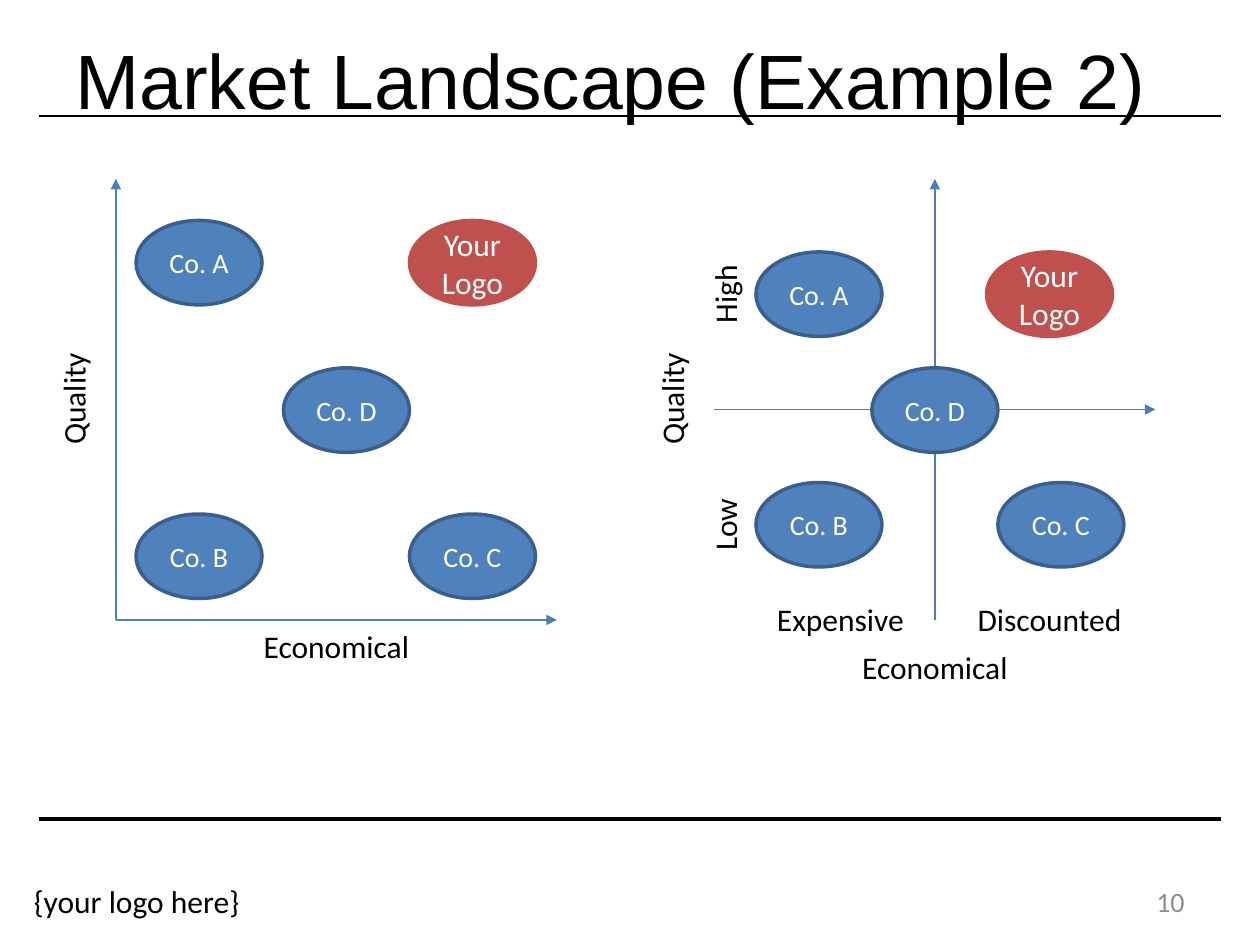
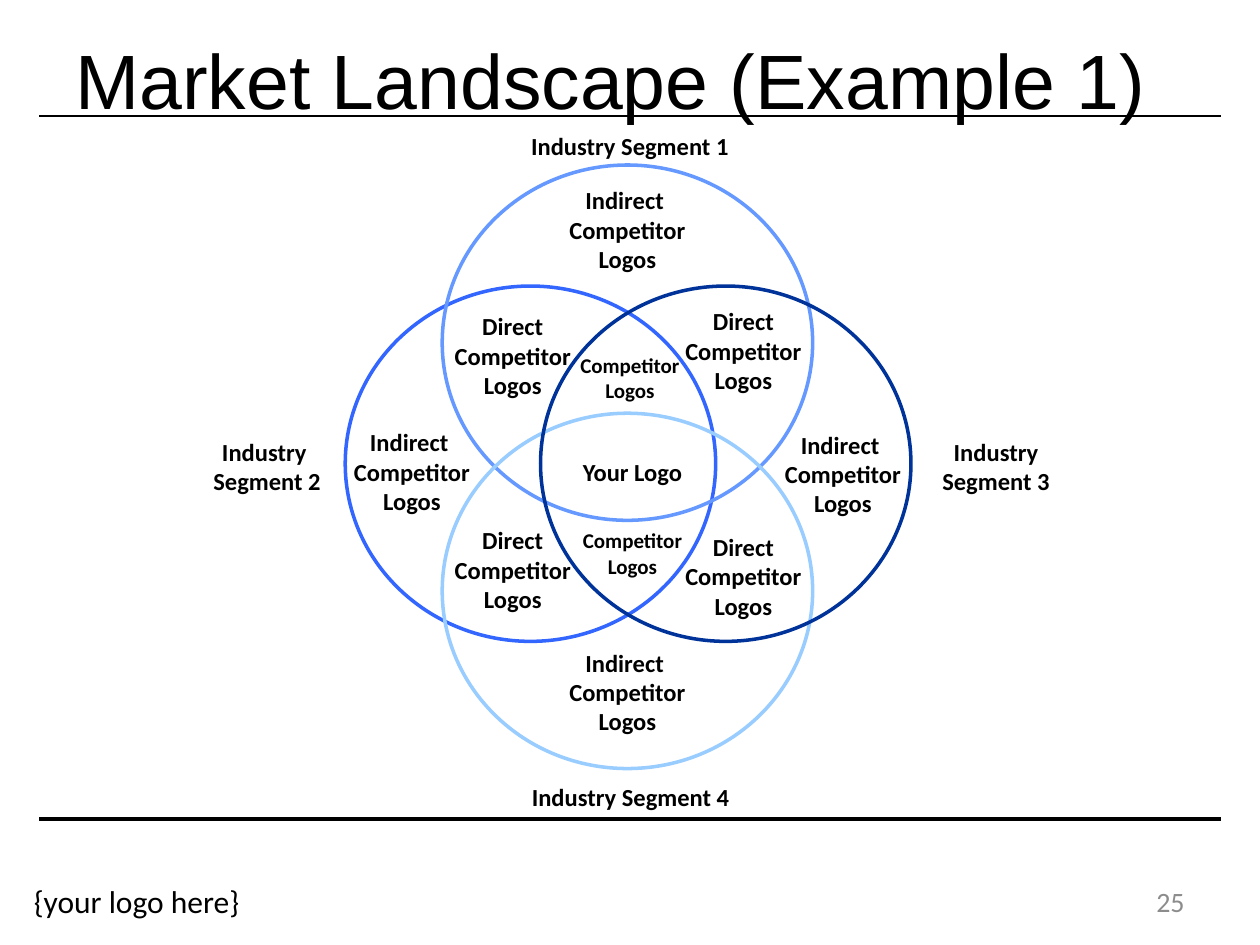
import pptx
import pptx.dml.color
import pptx.enum.shapes
import pptx.enum.text
import pptx.oxml.ns
import pptx.util
from lxml import etree

Inches = pptx.util.Inches
Pt = pptx.util.Pt
color = pptx.dml.color.RGBColor.from_string
OVAL = pptx.enum.shapes.MSO_SHAPE.OVAL
ALIGN = pptx.enum.text.PP_ALIGN

BLACK, WHITE, GRAY = "000000", "FFFFFF", "8C8C8C"
AXIS_BLUE = "4B7EBC"
RIVAL_FILL, RIVAL_EDGE, OWN_RED = "4F81BD", "3A5F8C", "C0504D"


def write(slide, text, box, size=18, hue=BLACK, bold=False, align=ALIGN.CENTER,
          font="Calibri", rotation=0, shape=None):
    """Put text into the given shape, or into a new text box."""
    if shape is None:
        shape = slide.shapes.add_textbox(*map(Inches, box))
    shape.rotation = rotation
    frame = shape.text_frame
    frame.word_wrap = True
    frame.vertical_anchor = pptx.enum.text.MSO_ANCHOR.MIDDLE
    frame.text = text
    for paragraph in frame.paragraphs:
        paragraph.alignment = align
        paragraph.font.name = font
        paragraph.font.size = Pt(size)
        paragraph.font.bold = bold
        paragraph.font.color.rgb = color(hue)
    return shape


def draw_line(slide, start, end, hue, width, arrow=False):
    line = slide.shapes.add_connector(
        pptx.enum.shapes.MSO_CONNECTOR.STRAIGHT, *map(Inches, start + end))
    line.line.color.rgb = color(hue)
    line.line.width = Pt(width)
    if arrow:
        etree.SubElement(line.line._get_or_add_ln(),
                         pptx.oxml.ns.qn("a:tailEnd"), type="triangle")
    etree.SubElement(line._element.spPr, pptx.oxml.ns.qn("a:effectLst"))


deck = pptx.Presentation()
deck.slide_width, deck.slide_height = Inches(10), Inches(7.5)

# Rules, title, footer and page number on every slide
pages = []
for title, number in [("Market Landscape (Example 2)", "10"),
                      ("Market Landscape (Example 1)", "25")]:
    page = deck.slides.add_slide(deck.slide_layouts[6])
    draw_line(page, (0.31, 6.5), (9.69, 6.5), BLACK, 1.75)
    draw_line(page, (0.31, 0.92), (9.69, 0.92), BLACK, 1.5)
    footer = write(page, "{your logo here}", (0.17, 6.95, 1.85, 0.4), align=ALIGN.LEFT)
    footer.text_frame.word_wrap = False
    write(page, title, (0.5, 0, 9, 1.25), 44, align=ALIGN.LEFT, font="Arial")
    write(page, number, (7.17, 6.95, 2.33, 0.4), 16, GRAY, align=ALIGN.RIGHT)
    pages.append(page)
quadrants, circles = pages

# Axes: upright and level pair for each chart
for start, end in [((0.92, 4.92), (0.92, 1.42)), ((0.92, 4.92), (4.42, 4.92)),
                   ((7.42, 4.92), (7.42, 1.42)), ((5.67, 3.25), (9.17, 3.25))]:
    draw_line(quadrants, start, end, AXIS_BLUE, 0.75, arrow=True)

# Axis labels
for label, left, top in [("Quality", -1.17, 2.83), ("Quality", 3.58, 2.83),
                         ("High", 4, 2), ("Low", 4, 3.83)]:
    write(quadrants, label, (left, top, 3.5, 0.67), rotation=270)
for label, left, top in [("Economical", 0.92, 4.96), ("Economical", 5.67, 5.13),
                         ("Expensive", 4.92, 4.75), ("Discounted", 6.58, 4.75)]:
    write(quadrants, label, (left, top, 3.5, 0.33))

# Companies placed on the left chart, then on the right one
companies = ["Your Logo", "Co. A", "Co. B", "Co. C", "Co. D"]
left_chart = [(3.25, 1.75), (1.08, 1.75), (1.08, 4.08), (3.25, 4.08), (2.25, 2.92)]
right_chart = [(7.83, 2), (6, 2), (6, 3.83), (7.92, 3.83), (6.92, 2.92)]
for spots in (left_chart, right_chart):
    for company, (left, top) in zip(companies, spots):
        own = company == "Your Logo"
        oval = quadrants.shapes.add_shape(OVAL, *map(Inches, (left, top, 1, 0.67)))
        oval.shadow.inherit = False
        oval.fill.solid()
        oval.fill.fore_color.rgb = color(OWN_RED if own else RIVAL_FILL)
        oval.line.color.rgb = color(OWN_RED if own else RIVAL_EDGE)
        oval.line.width = Pt(2)
        write(quadrants, company, None, 18 if own else 16, WHITE, shape=oval)

# Overlapping industry circles
for left, top, hue in [(2.74, 2.27, "3366FF"), (3.51, 1.31, "6699FF"),
                       (3.51, 3.28, "99CCFF"), (4.29, 2.27, "003399")]:
    circle = circles.shapes.add_shape(OVAL, *map(Inches, (left, top, 2.94, 2.82)))
    circle.shadow.inherit = False
    circle.fill.background()
    circle.line.color.rgb = color(hue)
    circle.line.width = Pt(2)

# Industry names around the circles
for industry, box in [("Industry Segment 1", (3.98, 0.92, 2.04, 0.48)),
                      ("Industry \nSegment 2", (1.25, 3.46, 1.74, 0.48)),
                      ("Industry Segment 3", (7.22, 3.46, 1.37, 0.48)),
                      ("Industry Segment 4", (4.06, 6.17, 1.89, 0.3))]:
    write(circles, industry, box, 14, bold=True)

# Competitors inside the circles
indirect = "Indirect \nCompetitor\nLogos"
direct = "Direct\nCompetitor\nLogos"
nearest = "Competitor\nLogos"
for group, size, spots in [
        ("Your Logo", 14, [(4, 3.5)]),
        (indirect, 14, [(2.25, 3.5), (5.67, 3.52), (3.96, 1.58), (3.96, 5.25)]),
        (direct, 14, [(3.05, 4.28), (4.88, 4.33), (4.88, 2.54), (3.05, 2.58)]),
        (nearest, 12, [(3.98, 2.76), (4, 4.15)])]:
    for left, top in spots:
        write(circles, group, (left, top, 2.04, 0.48), size, bold=True)

deck.save("out.pptx")
